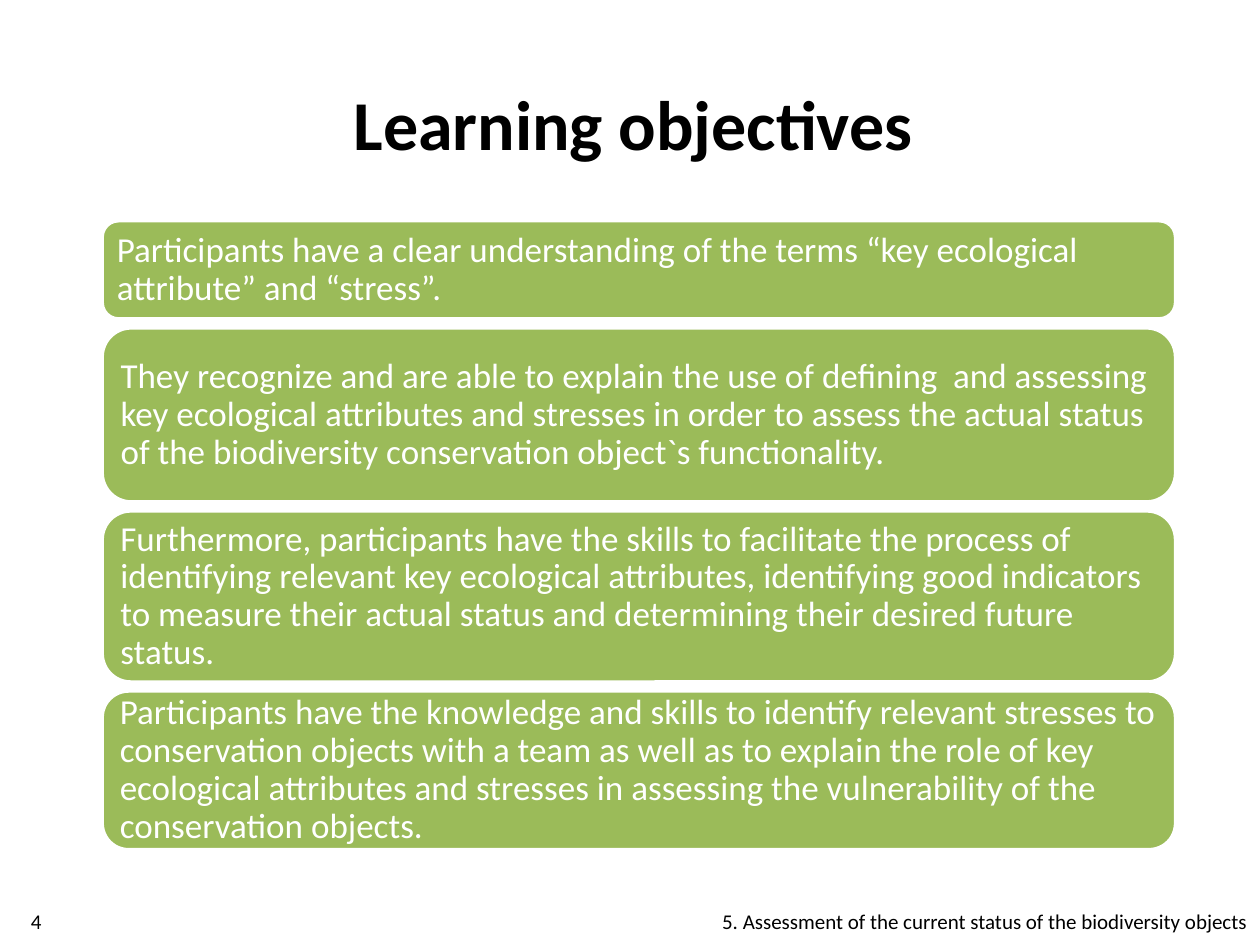
from pptx import Presentation
from pptx.dml.color import RGBColor
from pptx.enum.shapes import MSO_SHAPE
from pptx.enum.text import MSO_ANCHOR, PP_ALIGN
from pptx.util import Cm, Pt

ROUND = MSO_SHAPE.ROUNDED_RECTANGLE
MIDDLE = MSO_ANCHOR.MIDDLE
LEFT, CENTER, RIGHT = PP_ALIGN.LEFT, PP_ALIGN.CENTER, PP_ALIGN.RIGHT

FONT = "Calibri"
BLACK, WHITE, GREEN = "000000", "FFFFFF", "9BBB59"

# Bar height in cm and its wording
GOALS = [
    (1.98, "Participants have a clear understanding of the terms “key ecological "
           "attribute” and “stress”."),
    (3.51, "They recognize and are able to explain the use of defining  and assessing "
           "key ecological attributes and stresses in order to assess the actual status "
           "of the biodiversity conservation object`s functionality."),
    (3.45, "Furthermore, participants have the skills to facilitate the process of "
           "identifying relevant key ecological attributes, identifying good indicators "
           "to measure their actual status and determining their desired future status."),
    (3.2, "Participants have the knowledge and skills to identify relevant stresses to "
          "conservation objects with a team as well as to explain the role of key "
          "ecological attributes and stresses in assessing the vulnerability of the "
          "conservation objects."),
]
BAR_LEFT, BAR_TOP, BAR_WIDTH, BAR_GAP = 2.06, 4.45, 21.64, 0.18


def color(code):
    return RGBColor.from_string(code)


def write(shape, text, size, code, align, bold=False):
    frame = shape.text_frame
    frame.word_wrap = True
    frame.vertical_anchor = MIDDLE
    para = frame.paragraphs[0]
    para.text = text
    para.alignment = align
    font = para.font
    font.name, font.size, font.bold = FONT, Pt(size), bold
    font.color.rgb = color(code)
    return frame


def add_label(slide, area, text, size, align, bold=False):
    box = slide.shapes.add_textbox(*map(Cm, area))
    write(box, text, size, BLACK, align, bold)


def add_bar(slide, top, height, text):
    bar = slide.shapes.add_shape(
        ROUND, Cm(BAR_LEFT), Cm(top), Cm(BAR_WIDTH), Cm(height))
    bar.shadow.inherit = False
    bar.fill.solid()
    bar.fill.fore_color.rgb = color(GREEN)
    bar.line.color.rgb = color(WHITE)
    bar.line.width = Pt(2)
    frame = write(bar, text, 20, WHITE, LEFT)
    frame.margin_left = frame.margin_right = Cm(0.2)
    frame.margin_top = frame.margin_bottom = Cm(0.2)
    frame.paragraphs[0].line_spacing = 0.9


def main():
    deck = Presentation()
    deck.slide_width, deck.slide_height = Cm(25.4), Cm(19.05)
    slide = deck.slides.add_slide(deck.slide_layouts[6])

    # Title
    add_label(slide, (3.61, 0.97, 18.31, 3), "Learning objectives", 40, CENTER, True)

    # Stacked objectives
    top = BAR_TOP
    for height, text in GOALS:
        add_bar(slide, top, height, text)
        top += height + BAR_GAP

    # Footer
    add_label(slide, (10.49, 18.08, 14.91, 0.97),
              "5. Assessment of the current status of the biodiversity objects", 12, RIGHT)
    add_label(slide, (-0.03, 18.08, 1.52, 0.97), "4", 12, CENTER)

    deck.save("out.pptx")


if __name__ == "__main__":
    main()
